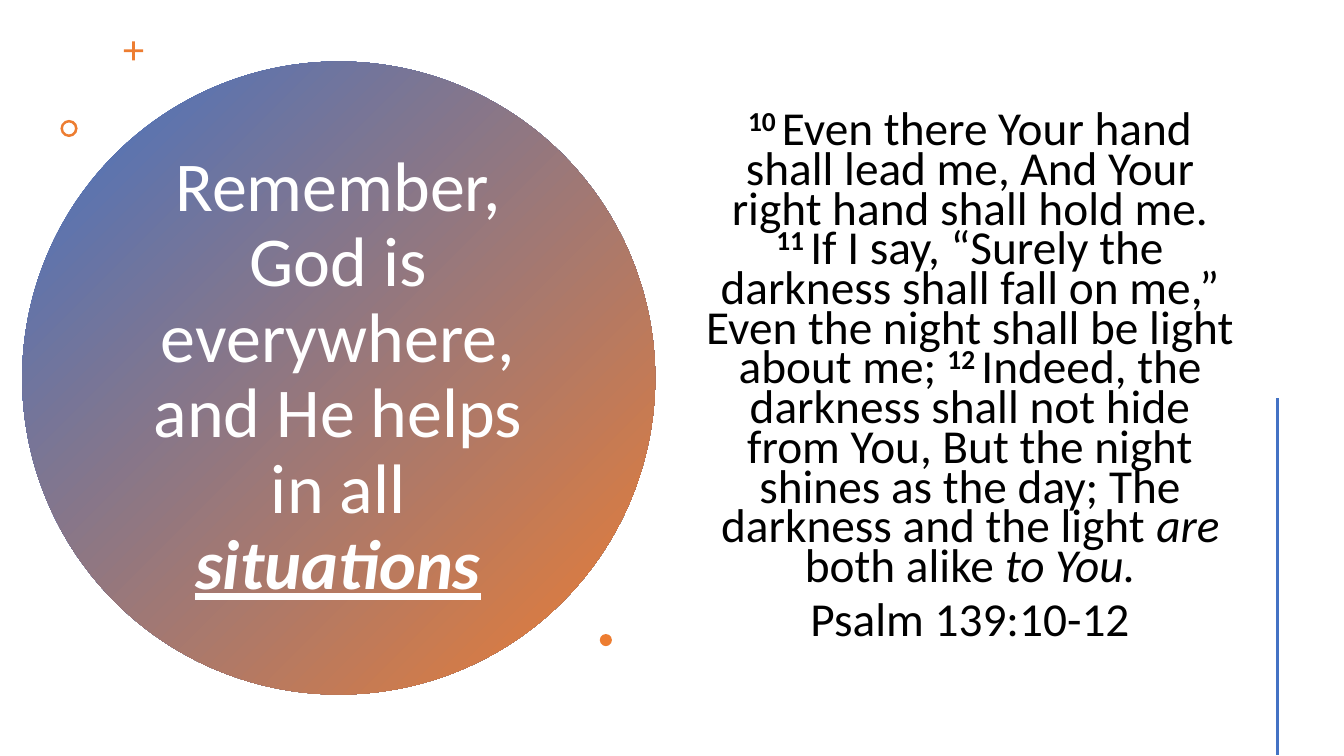
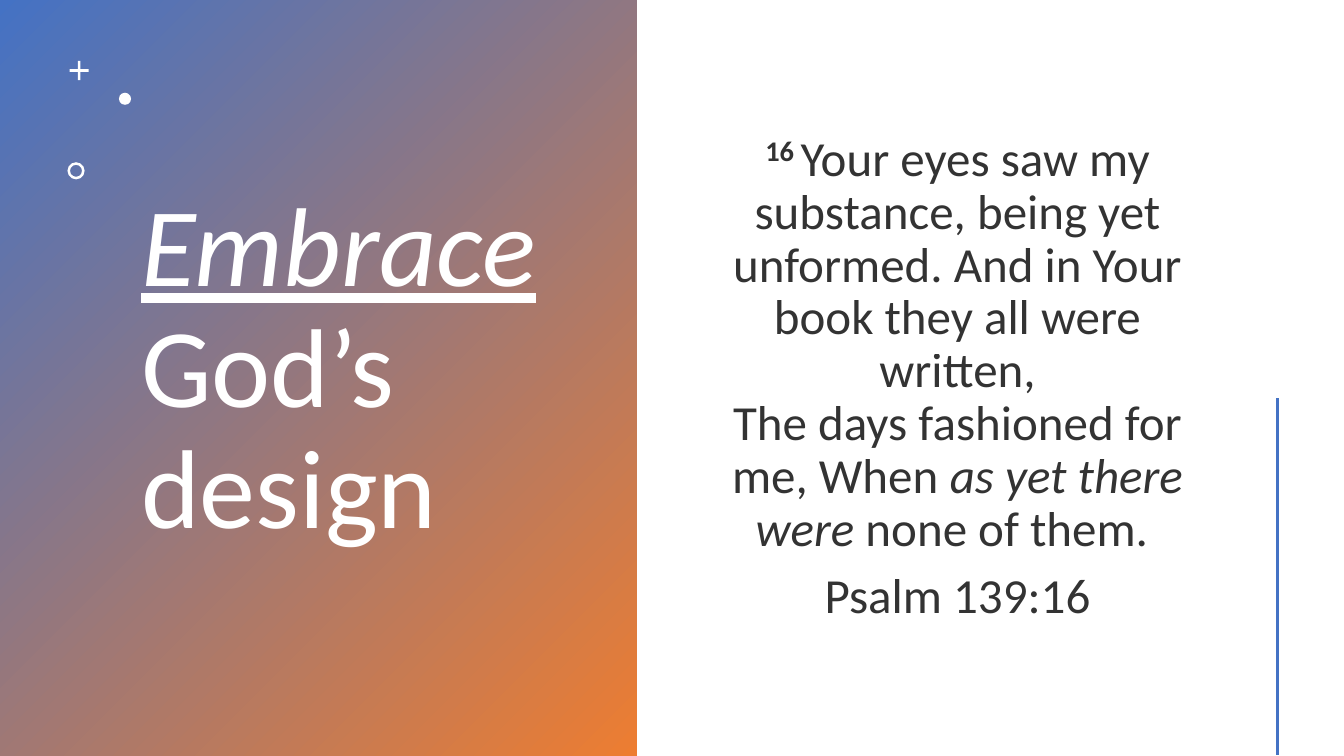
import pptx
import pptx.util
import pptx.dml.color
import pptx.enum.shapes
import pptx.enum.text
import pptx.oxml.ns
from dataclasses import dataclass
from lxml import etree

SHAPE = pptx.enum.shapes.MSO_SHAPE
ALIGN = pptx.enum.text.PP_ALIGN


@dataclass(frozen=True)
class Theme:
    font: str = "Calibri"
    blue: str = "4472C4"
    orange: str = "ED7D31"
    white: str = "FFFFFF"
    black: str = "000000"
    circle_title: float = 50
    panel_title: float = 80
    long_verse: float = 33.8
    short_verse: float = 35
    rule: float = 2


T = Theme()
W, H = pptx.util.Inches(13.333), pptx.util.Inches(7.5)

# Run styles
PLAIN = {}
ITALIC = {"italic": True}
NUMBER = {"bold": True}  # verse numbers, also raised
BREAK = ("\n", PLAIN)

# Small marks: preset, size as % of slide height, adjustment
MARKS = {
    "plus": (SHAPE.CROSS, 2.53, 0.43),
    "ring": (SHAPE.DONUT, 2.27, 0.15),
    "dot": (SHAPE.OVAL, 1.6, None),
}


def rgb(color):
    return pptx.dml.color.RGBColor.from_string(color)


def px(share):
    """Share of the slide's width, in percent."""
    return int(W * share / 100)


def py(share):
    """Share of the slide's height, in percent."""
    return int(H * share / 100)


def place(sp, x, y, w, h):
    sp.left, sp.top, sp.width, sp.height = px(x), py(y), px(w), py(h)


def add_plain(s, kind, left, top, width, height):
    sp = s.shapes.add_shape(kind, left, top, width, height)
    sp.shadow.inherit = False
    sp.line.fill.background()
    return sp


def add_round(s, kind, cx, cy, size):
    """Shape as wide as high, set by its centre."""
    d = py(size)
    return add_plain(s, kind, px(cx) - d // 2, py(cy) - d // 2, d, d)


def paint_backdrop(s, sp):
    """Diagonal gradient, behind everything else."""
    sp.fill.gradient()
    sp.fill.gradient_angle = 315
    for stop, color in zip(sp.fill.gradient_stops, (T.blue, T.orange)):
        stop.color.rgb = rgb(color)
    s.shapes._spTree.insert(2, sp._element)


def add_mark(s, name, cx, cy, color):
    kind, size, adj = MARKS[name]
    sp = add_round(s, kind, cx, cy, size)
    sp.fill.solid()
    sp.fill.fore_color.rgb = rgb(color)
    if adj is not None:
        sp.adjustments[0] = adj


def add_rule(s):
    x = px(95.03)
    line = s.shapes.add_connector(
        pptx.enum.shapes.MSO_CONNECTOR.STRAIGHT, x, py(52.67), x, py(99.87))
    line.line.color.rgb = rgb(T.blue)
    line.line.width = pptx.util.Pt(T.rule)
    etree.SubElement(line._element.spPr, pptx.oxml.ns.qn("a:effectLst"))


def set_alpha(r, percent):
    color = r._r.rPr.find(".//" + pptx.oxml.ns.qn("a:srgbClr"))
    alpha = etree.SubElement(color, pptx.oxml.ns.qn("a:alpha"))
    alpha.set("val", str(percent * 1000))


def write(tf, paragraphs, size, color, align, spacing, alpha=100):
    tf.word_wrap = True
    tf.auto_size = pptx.enum.text.MSO_AUTO_SIZE.NONE
    tf.vertical_anchor = pptx.enum.text.MSO_ANCHOR.MIDDLE
    for i, runs in enumerate(paragraphs):
        p = tf.add_paragraph() if i else tf.paragraphs[0]
        p.alignment, p.line_spacing = align, spacing
        p.space_before = pptx.util.Pt(10 if i else 0)
        for text, style in runs:
            if text == "\n":
                p.add_line_break()
                continue
            r = p.add_run()
            r.text = text
            look = {"name": T.font, "size": pptx.util.Pt(size), **style}
            for key, value in look.items():
                setattr(r.font, key, value)
            r.font.color.rgb = rgb(color)
            if style is NUMBER:
                r._r.rPr.set("baseline", "30000")
            if alpha < 100:
                set_alpha(r, alpha)


def set_title(s, box, runs, size, align):
    place(s.shapes.title, *box)
    write(s.shapes.title.text_frame, [runs], size, T.white, align, 0.9)


def add_verse(s, width, paragraphs, size, spacing, alpha=100):
    sp = s.shapes.add_textbox(0, 0, 0, 0)
    place(sp, 51.68, 7.6, width, 85.07)
    write(sp.text_frame, paragraphs, size, T.black, ALIGN.CENTER, spacing, alpha)


def new_slide(prs):
    s = prs.slides.add_slide(prs.slide_layouts[5])
    add_rule(s)
    return s


def everywhere_slide(prs):
    s = new_slide(prs)
    paint_backdrop(s, add_round(s, SHAPE.OVAL, 25.2, 50, 83.73))
    set_title(s, (10.2, 18.8, 29.93, 62.27), [
        ("Remember, God is everywhere, and He helps in all ", PLAIN),
        ("situations", {"bold": True, "italic": True, "underline": True}),
    ], T.circle_title, ALIGN.CENTER)
    for name, cx, cy in (("plus", 9.94, 6.73), ("ring", 5.14, 17),
                         ("dot", 45.08, 84.67)):
        add_mark(s, name, cx, cy, T.orange)
    add_verse(s, 41.03, [[
        ("10 ", NUMBER),
        ("Even there Your hand shall lead me, And Your right hand shall hold me.", PLAIN),
        BREAK,
        ("11 ", NUMBER),
        ("If I say, “Surely the darkness shall fall on me,” Even the night "
         "shall be light about me; ", PLAIN),
        ("12 ", NUMBER),
        ("Indeed, the darkness shall not hide from You, But the night shines "
         "as the day; The darkness and the light ", PLAIN),
        ("are", ITALIC),
        (" both alike ", PLAIN),
        ("to You.", ITALIC),
    ], [("Psalm 139:10-12", PLAIN)]], T.long_verse, 0.7)


def embrace_slide(prs):
    s = new_slide(prs)
    paint_backdrop(s, add_plain(s, SHAPE.RECTANGLE, 0, 0, px(47.4), H))
    set_title(s, (9.75, 5.6, 32.85, 87.07), [
        ("Embrace", {"italic": True, "underline": True}),
        (" God’s design", PLAIN),
    ], T.panel_title, ALIGN.LEFT)
    for name, cx, cy in (("plus", 5.89, 9.33), ("dot", 9.3, 13.07),
                         ("ring", 5.66, 22.6)):
        add_mark(s, name, cx, cy, T.white)
    add_verse(s, 39.15, [[
        ("16 ", NUMBER),
        ("Your eyes saw my substance, being yet unformed. And in Your book "
         "they all were written,", PLAIN),
        BREAK,
        ("The days fashioned for me, When ", PLAIN),
        ("as yet there were", ITALIC),
        (" none of them. ", PLAIN),
    ], [("Psalm 139:16", PLAIN)]], T.short_verse, 0.9, alpha=80)


def main():
    prs = pptx.Presentation()
    prs.slide_width, prs.slide_height = W, H
    everywhere_slide(prs)
    embrace_slide(prs)
    prs.save("out.pptx")


if __name__ == "__main__":
    main()
